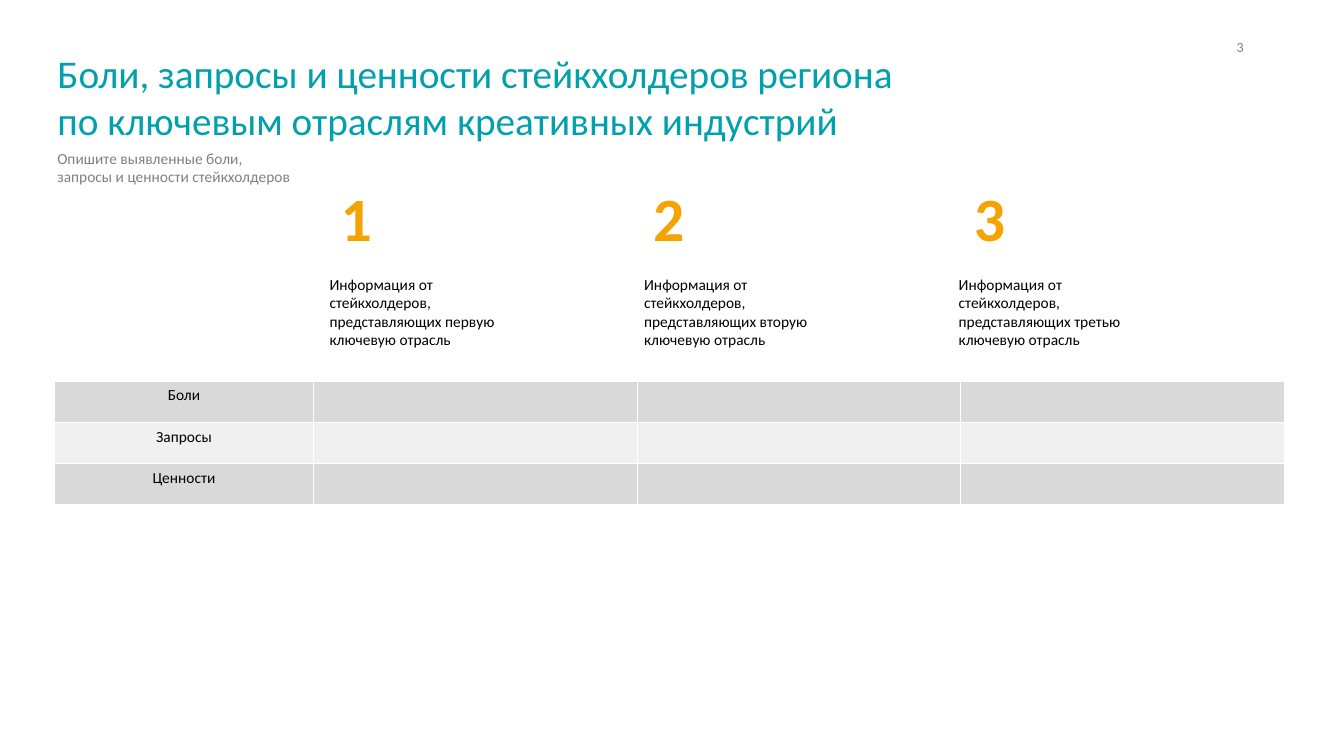
from lxml import etree
from pptx import Presentation
from pptx.dml.color import RGBColor
from pptx.enum.text import MSO_ANCHOR, MSO_AUTO_SIZE, PP_ALIGN
from pptx.oxml.ns import qn
from pptx.util import Inches, Pt

LEFT, CENTER = PP_ALIGN.LEFT, PP_ALIGN.CENTER
TOP = MSO_ANCHOR.TOP
NO_AUTOFIT = MSO_AUTO_SIZE.NONE

TEAL = RGBColor(0x00, 0xA0, 0xAC)
ORANGE = RGBColor(0xF4, 0xA3, 0x00)
GRAY = RGBColor(0x80, 0x80, 0x80)
BLACK = RGBColor(0x00, 0x00, 0x00)
DARK_BAND = RGBColor(0xD9, 0xD9, 0xD9)
LIGHT_BAND = RGBColor(0xF0, 0xF0, 0xF0)

TITLE = ("Боли, запросы и ценности стейкхолдеров региона "
         "по ключевым отраслям креативных индустрий")
SUBTITLE = "Опишите выявленные боли, запросы и ценности стейкхолдеров"
# Industry ordinal and the left edge of its number
INDUSTRIES = [("первую", 3.28), ("вторую", 6.38), ("третью", 9.56)]
ROWS = ["Боли", "Запросы", "Ценности"]
COL_WIDTHS = [2.57, 3.21, 3.21, 3.21]
ROW_HEIGHT = 0.41


def format_paragraph(p, size, color, bold=False, align=LEFT):
    p.alignment = align
    values = {"name": "Calibri", "size": Pt(size), "bold": bold}
    for name, value in values.items():
        setattr(p.font, name, value)
    p.font.color.rgb = color


def fill_text(sp, text, size, color, **style):
    tf = sp.text_frame
    tf.text = text
    values = {"word_wrap": True, "auto_size": NO_AUTOFIT,
              "vertical_anchor": TOP}
    for name, value in values.items():
        setattr(tf, name, value)
    format_paragraph(tf.paragraphs[0], size, color, **style)


def add_title(s):
    sp = s.shapes.title
    box = {"left": 0.47, "top": 0.44, "width": 8.83, "height": 1.04}
    for name, value in box.items():
        setattr(sp, name, Inches(value))
    fill_text(sp, TITLE, 28, TEAL)


def add_text(s, box, text, size, color, **style):
    sp = s.shapes.add_textbox(*[Inches(v) for v in box])
    fill_text(sp, text, size, color, **style)


def add_borders(cell):
    """Draw thin white lines on all four sides of a cell."""
    tc_pr = cell._tc.get_or_add_tcPr()
    for i, side in enumerate(("lnL", "lnR", "lnT", "lnB")):
        ln = etree.Element(qn("a:" + side), w=str(Pt(1)))
        fill = etree.SubElement(ln, qn("a:solidFill"))
        etree.SubElement(fill, qn("a:srgbClr"), val="FFFFFF")
        tc_pr.insert(i, ln)


def add_stakeholder_table(s):
    frame = s.shapes.add_table(
        len(ROWS), len(COL_WIDTHS), Inches(0.54), Inches(3.78),
        Inches(sum(COL_WIDTHS)), Inches(ROW_HEIGHT * len(ROWS)))
    table = frame.table
    for col, width in zip(table.columns, COL_WIDTHS):
        col.width = Inches(width)
    for i, (row, label) in enumerate(zip(table.rows, ROWS)):
        row.height = Inches(ROW_HEIGHT)
        row.cells[0].text = label
        for cell in row.cells:
            cell.fill.solid()
            cell.fill.fore_color.rgb = LIGHT_BAND if i % 2 else DARK_BAND
            add_borders(cell)
            format_paragraph(cell.text_frame.paragraphs[0], 11, BLACK,
                             align=CENTER)


def main():
    prs = Presentation()
    prs.slide_width, prs.slide_height = Inches(13.33), Inches(7.5)
    s = prs.slides.add_slide(prs.slide_layouts[5])

    add_text(s, (12.08, 0.33, 0.44, 0.28), "3", 10, GRAY, align=CENTER)
    add_title(s)
    add_text(s, (0.47, 1.43, 2.56, 0.47), SUBTITLE, 11, GRAY)
    for i, (ordinal, number_left) in enumerate(INDUSTRIES):
        info = ("Информация от стейкхолдеров, представляющих "
                f"{ordinal} ключевую отрасль")
        add_text(s, (3.17 + 3.12 * i, 2.68, 2.2, 0.84), info, 11, BLACK)
        add_text(s, (number_left, 1.74, 1.49, 0.84), str(i + 1), 44, ORANGE,
                 bold=True)
    add_stakeholder_table(s)

    prs.save("out.pptx")


if __name__ == "__main__":
    main()
